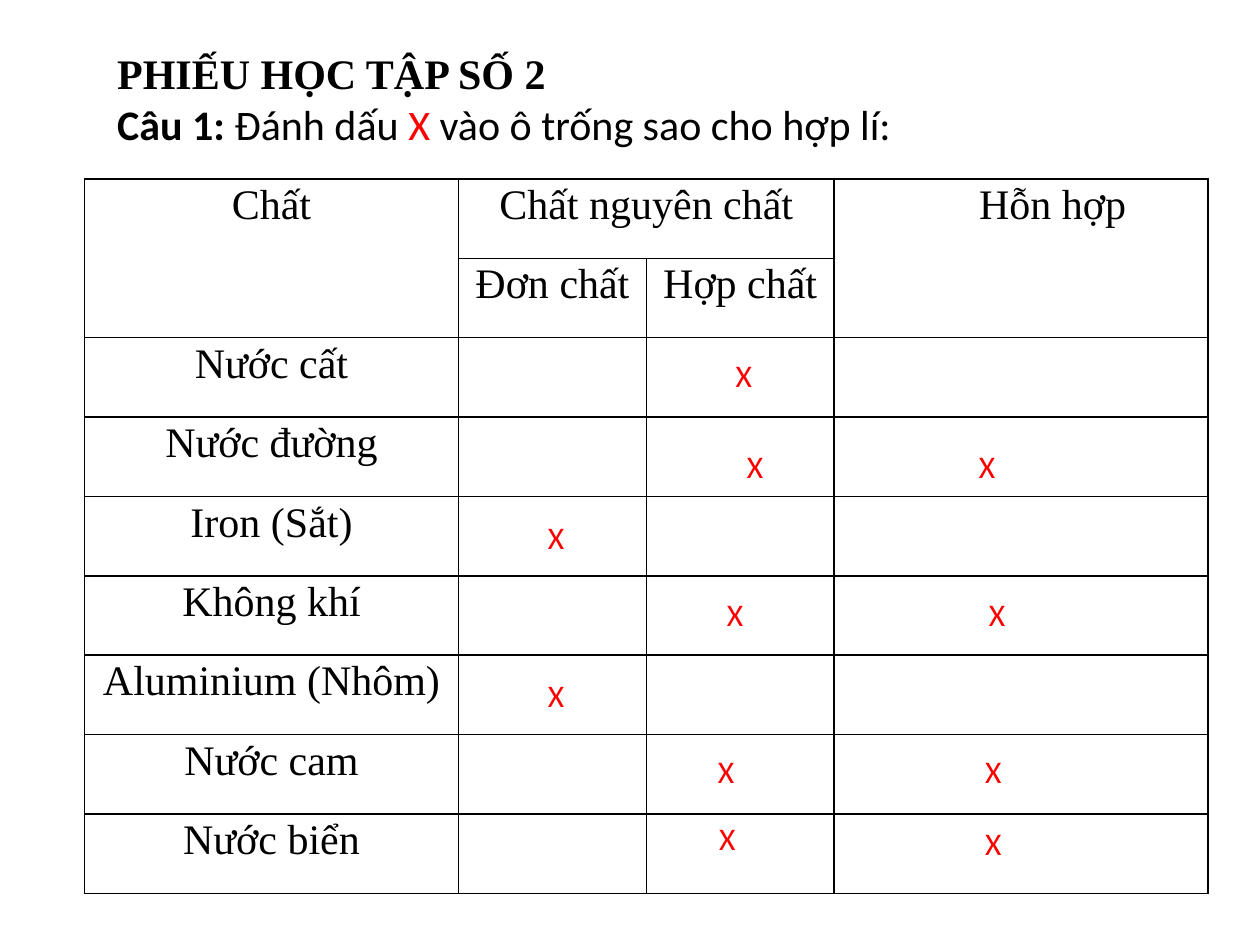
"""Build the worksheet slide on pure substances and mixtures."""
from dataclasses import dataclass

import lxml.etree
import pptx
import pptx.dml.color
import pptx.enum.text
import pptx.oxml.ns
import pptx.util

Inches = pptx.util.Inches
Pt = pptx.util.Pt
ALIGN = pptx.enum.text.PP_ALIGN


@dataclass(frozen=True)
class Theme:
    ink: str = "000000"
    answer: str = "FF0000"
    serif: str = "Times New Roman"
    sans: str = "Calibri"
    body_size: int = 24
    mark_size: int = 18
    border_width: int = 1


@dataclass(frozen=True)
class Span:
    text: str
    font: str
    color: str
    bold: bool = False


@dataclass(frozen=True)
class Header:
    text: str
    row: int
    column: int
    rows: int = 1
    columns: int = 1
    indent: float = 0


@dataclass(frozen=True)
class Mark:
    left: float
    top: float


THEME = Theme()
HEADING = (
    (Span("PHIẾU HỌC TẬP SỐ 2", THEME.serif, THEME.ink, True),),
    (
        Span("Câu 1: ", THEME.sans, THEME.ink, True),
        Span("Đánh dấu ", THEME.sans, THEME.ink),
        Span("X ", THEME.sans, THEME.answer),
        Span("vào ô trống sao cho hợp lí:", THEME.sans, THEME.ink),
    ),
)
HEADERS = (
    Header("Chất", 0, 0, rows=2),
    Header("Chất nguyên chất", 0, 1, columns=2),
    Header("Hỗn hợp", 0, 3, rows=2, indent=0.5),
    Header("Đơn chất", 1, 1),
    Header("Hợp chất", 1, 2),
)
SUBSTANCES = (
    "Nước cất", "Nước đường", "Iron (Sắt)", "Không khí",
    "Aluminium (Nhôm)", "Nước cam", "Nước biển",
)
HEADER_ROWS = 2
COLUMN_WIDTHS = (2.97, 1.49, 1.49, 2.97)
ROW_HEIGHT = 0.63
MARKS = (
    Mark(5.74, 2.78),
    Mark(5.83, 3.5), Mark(7.67, 3.5),
    Mark(4.25, 4.06),
    Mark(5.67, 4.67), Mark(7.75, 4.67),
    Mark(4.25, 5.32),
    Mark(5.6, 5.92), Mark(7.72, 5.92),
    Mark(5.61, 6.45), Mark(7.72, 6.49),
)


def style_run(run, font: str, size: int, color: str, bold: bool = False) -> None:
    """Set the typeface, size, colour and weight of a run."""
    run.font.name = font
    run.font.size = Pt(size)
    run.font.bold = bold
    run.font.color.rgb = pptx.dml.color.RGBColor.from_string(color)


def draw_heading(page) -> None:
    """Place the worksheet heading in the title placeholder."""
    box = page.shapes.title
    box.left, box.top = Inches(0.83), Inches(0.33)
    box.width, box.height = Inches(6.39), Inches(1.31)
    frame = box.text_frame
    frame.word_wrap = True
    frame.auto_size = pptx.enum.text.MSO_AUTO_SIZE.NONE
    frame.vertical_anchor = pptx.enum.text.MSO_ANCHOR.TOP
    for index, spans in enumerate(HEADING):
        para = frame.add_paragraph() if index else frame.paragraphs[0]
        para.alignment = ALIGN.LEFT
        for span in spans:
            run = para.add_run()
            run.text = span.text
            style_run(run, span.font, THEME.body_size, span.color, span.bold)


def outline_cell(cell) -> None:
    """Give a cell a clear fill and a thin border on every side."""
    cell.fill.background()
    properties = cell._tc.get_or_add_tcPr()
    qn = pptx.oxml.ns.qn
    for index, side in enumerate(("lnL", "lnR", "lnT", "lnB")):
        line = lxml.etree.Element(qn(f"a:{side}"), w=str(Pt(THEME.border_width)))
        fill = lxml.etree.SubElement(line, qn("a:solidFill"))
        lxml.etree.SubElement(fill, qn("a:srgbClr"), val=THEME.ink)
        properties.insert(index, line)


def write_cell(cell, text: str, indent: float = 0) -> None:
    """Write centred table text in a cell."""
    cell.margin_left = cell.margin_right = Inches(0.07)
    cell.margin_top = cell.margin_bottom = 0
    cell.text_frame.text = text
    para = cell.text_frame.paragraphs[0]
    para.alignment = ALIGN.CENTER
    para.line_spacing = 1.07
    para.space_before = para.space_after = Pt(6)
    if indent:
        para._p.get_or_add_pPr().set("indent", str(Inches(indent)))
    style_run(para.runs[0], THEME.serif, THEME.body_size, THEME.ink)


def draw_table(page) -> None:
    """Draw the classification table with its merged headers."""
    row_count = HEADER_ROWS + len(SUBSTANCES)
    table = page.shapes.add_table(
        row_count, len(COLUMN_WIDTHS), Inches(0.67), Inches(1.42),
        Inches(sum(COLUMN_WIDTHS)), Inches(ROW_HEIGHT * row_count),
    ).table
    table.first_row = table.horz_banding = False
    for column, width in zip(table.columns, COLUMN_WIDTHS):
        column.width = Inches(width)
    for row in table.rows:
        row.height = Inches(ROW_HEIGHT)
    for cell in table.iter_cells():
        outline_cell(cell)
    for header in HEADERS:
        cell = table.cell(header.row, header.column)
        if header.rows * header.columns > 1:
            cell.merge(table.cell(header.row + header.rows - 1,
                                  header.column + header.columns - 1))
        write_cell(cell, header.text, header.indent)
    for row_index, substance in enumerate(SUBSTANCES, HEADER_ROWS):
        write_cell(table.cell(row_index, 0), substance)


def draw_mark(page, mark: Mark) -> None:
    """Draw one answer mark over the table."""
    box = page.shapes.add_textbox(
        Inches(mark.left), Inches(mark.top), Inches(0.33), Inches(0.4))
    frame = box.text_frame
    frame.word_wrap = False
    frame.auto_size = pptx.enum.text.MSO_AUTO_SIZE.SHAPE_TO_FIT_TEXT
    frame.text = "X"
    style_run(frame.paragraphs[0].runs[0], THEME.sans, THEME.mark_size, THEME.answer)


def main() -> None:
    """Build and save the deck."""
    deck = pptx.Presentation()
    deck.slide_width, deck.slide_height = Inches(10), Inches(7.5)
    page = deck.slides.add_slide(deck.slide_layouts.get_by_name("Title Only"))
    draw_heading(page)
    draw_table(page)
    for mark in MARKS:
        draw_mark(page, mark)
    deck.save("out.pptx")


if __name__ == "__main__":
    main()
